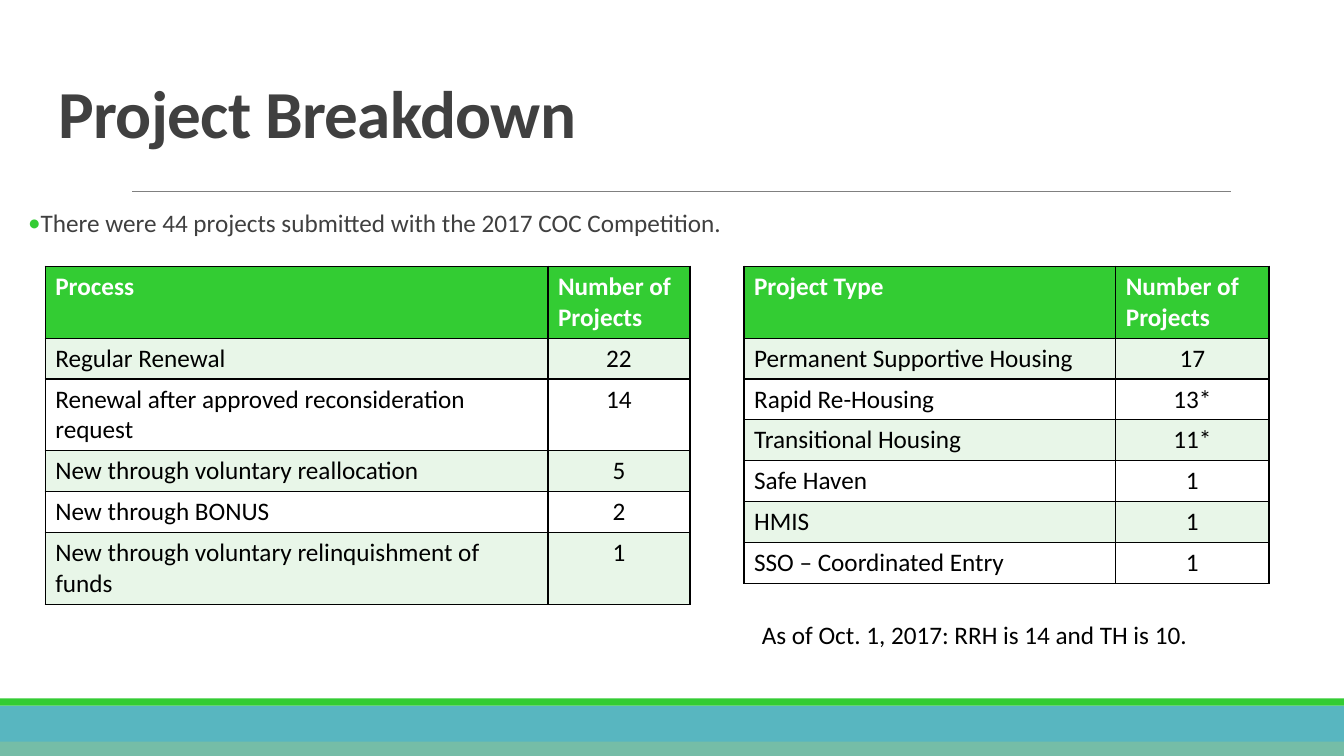
from lxml import etree
from pptx import Presentation
from pptx.dml.color import RGBColor
from pptx.enum.shapes import MSO_CONNECTOR, MSO_SHAPE
from pptx.enum.text import MSO_ANCHOR, MSO_AUTO_SIZE, PP_ALIGN
from pptx.oxml.ns import qn
from pptx.util import Cm, Pt

LEFT, CENTER = PP_ALIGN.LEFT, PP_ALIGN.CENTER
TOP, MIDDLE = MSO_ANCHOR.TOP, MSO_ANCHOR.MIDDLE
NO_AUTOFIT = MSO_AUTO_SIZE.NONE
RECTANGLE, STRAIGHT = MSO_SHAPE.RECTANGLE, MSO_CONNECTOR.STRAIGHT

GREEN, BLUE, TEAL = "33CC33", "58B6C0", "75BDA7"
PALE_GREEN, WHITE, BLACK = "E8F6E8", "FFFFFF", "000000"
DARK_GRAY, GRAY = "404040", "808080"
ROW_HEIGHT, TWO_LINE_HEIGHT = Cm(1.03), Cm(1.81)
LONGEST_SINGLE_LINE = 40


def color(value):
    return RGBColor.from_string(value)


def write(text_frame, text, size=18, fill=BLACK, bold=False, align=LEFT,
          line_spacing=1.0, space_after=0):
    """Fill the first paragraph and return it."""
    paragraph = text_frame.paragraphs[0]
    paragraph.alignment = align
    paragraph.line_spacing = line_spacing
    paragraph.space_before = Pt(0)
    paragraph.space_after = Pt(space_after)
    run = paragraph.add_run()
    run.text = text
    run.font.name = "Calibri"
    run.font.size = Pt(size)
    run.font.bold = bold
    run.font.color.rgb = color(fill)
    return paragraph


presentation = Presentation()
presentation.slide_width, presentation.slide_height = Cm(33.87), Cm(19.05)
slide = presentation.slides.add_slide(presentation.slide_layouts[1])
slide.background.fill.solid()
slide.background.fill.fore_color.rgb = color(WHITE)

# Footer bands and rule under the title
for top, height, fill in [(17.78, 1.27, BLUE), (17.6, 0.18, GREEN), (18.69, 0.36, TEAL)]:
    band = slide.shapes.add_shape(
        RECTANGLE, 0, Cm(top), presentation.slide_width, Cm(height))
    band.shadow.inherit = False
    band.fill.solid()
    band.fill.fore_color.rgb = color(fill)
    band.line.fill.background()

rule = slide.shapes.add_connector(STRAIGHT, Cm(3.33), Cm(4.83), Cm(31.01), Cm(4.83))
rule.line.color.rgb = color(GRAY)
rule.line.width = Pt(0.5)
etree.SubElement(rule._element.spPr, qn("a:effectLst"))

# Title and bullet
title, body = slide.shapes.title, slide.placeholders[1]
for placeholder, left, top, width, height, anchor in [
    (title, 1.14, 1.65, 31.55, 2.62, MIDDLE),
    (body, 0.38, 4.98, 18.36, 1.45, TOP),
]:
    placeholder.left, placeholder.top = Cm(left), Cm(top)
    placeholder.width, placeholder.height = Cm(width), Cm(height)
    frame = placeholder.text_frame
    frame.word_wrap = True
    frame.auto_size = NO_AUTOFIT
    frame.vertical_anchor = anchor
    frame.margin_left = frame.margin_right = Cm(0.33)
    frame.margin_top = frame.margin_bottom = Cm(0.33)

heading = write(title.text_frame, "Project Breakdown", size=48, fill=DARK_GRAY,
                bold=True, line_spacing=0.85)
heading.runs[0]._r.get_or_add_rPr().set("spc", "-50")

bullet = write(body.text_frame,
               "There were 44 projects submitted with the 2017 COC Competition.",
               fill=DARK_GRAY, line_spacing=0.9, space_after=2)
bullet_properties = bullet._p.get_or_add_pPr()
bullet_properties.set("marL", str(Cm(0.25)))
bullet_properties.set("indent", str(Cm(-0.25)))
bullet_color = etree.SubElement(bullet_properties, qn("a:buClr"))
etree.SubElement(bullet_color, qn("a:srgbClr"), val=GREEN)
etree.SubElement(bullet_properties, qn("a:buFont"), typeface="Calibri")
etree.SubElement(bullet_properties, qn("a:buChar"), char="•")

# Tables
project_types = [
    ("Project Type", "Number of Projects"),
    ("Permanent Supportive Housing", "17"),
    ("Rapid Re-Housing", "13*"),
    ("Transitional Housing", "11*"),
    ("Safe Haven", "1"),
    ("HMIS", "1"),
    ("SSO – Coordinated Entry", "1"),
]
processes = [
    ("Process", "Number of Projects"),
    ("Regular Renewal", "22"),
    ("Renewal after approved reconsideration request", "14"),
    ("New through voluntary reallocation", "5"),
    ("New through BONUS", "2"),
    ("New through voluntary relinquishment of funds", "1"),
]
for rows, left, column_widths in [
    (project_types, 18.75, (9.37, 3.86)),
    (processes, 1.14, (12.67, 3.58)),
]:
    table = slide.shapes.add_table(
        len(rows), 2, Cm(left), Cm(6.71), Cm(sum(column_widths)),
        ROW_HEIGHT * len(rows)).table
    for column, width in zip(table.columns, column_widths):
        column.width = Cm(width)
    for row_index, values in enumerate(rows):
        is_header = row_index == 0
        has_two_lines = is_header or len(values[0]) > LONGEST_SINGLE_LINE
        table.rows[row_index].height = TWO_LINE_HEIGHT if has_two_lines else ROW_HEIGHT
        row_fill = GREEN if is_header else (WHITE, PALE_GREEN)[row_index % 2]
        for column_index, value in enumerate(values):
            cell = table.cell(row_index, column_index)
            cell_properties = cell._tc.get_or_add_tcPr()
            for side in ("a:lnL", "a:lnR", "a:lnT", "a:lnB"):
                border = etree.SubElement(cell_properties, qn(side), w=str(Pt(1)))
                border_fill = etree.SubElement(border, qn("a:solidFill"))
                etree.SubElement(border_fill, qn("a:srgbClr"), val=BLACK)
            cell.fill.solid()
            cell.fill.fore_color.rgb = color(row_fill)
            write(cell.text_frame, value, bold=is_header,
                  fill=WHITE if is_header else BLACK,
                  align=CENTER if column_index and not is_header else LEFT)

# Note under the project types
note = slide.shapes.add_textbox(Cm(18.95), Cm(15.49), Cm(13.34), Cm(1.03))
note.text_frame.word_wrap = True
write(note.text_frame, "As of Oct. 1, 2017: RRH is 14 and TH is 10.")

presentation.save("out.pptx")
